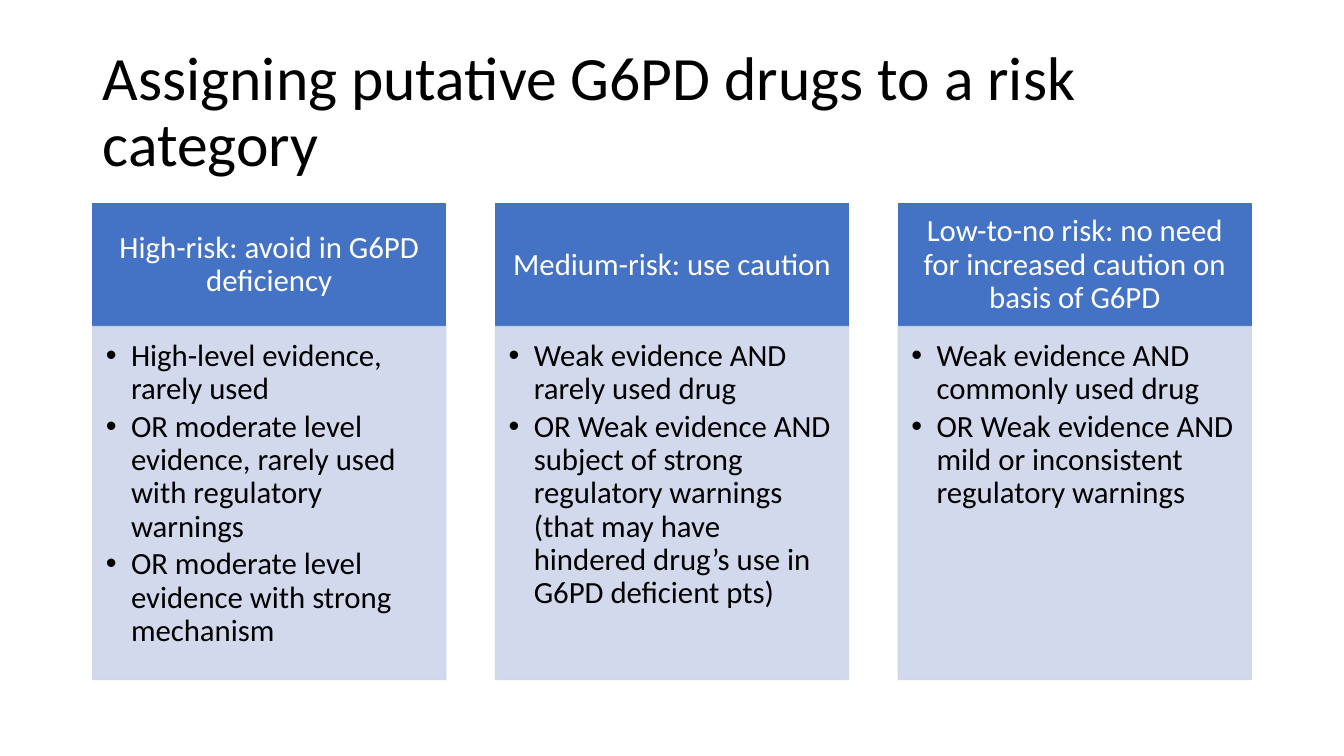
"""Build a slide that sorts G6PD drugs into three risk columns."""
from lxml import etree
from pptx import Presentation
from pptx.dml.color import RGBColor
from pptx.enum.shapes import MSO_SHAPE
from pptx.enum.text import MSO_ANCHOR, PP_ALIGN
from pptx.oxml.ns import qn
from pptx.util import Inches, Pt

RECT = MSO_SHAPE.RECTANGLE
TOP, MIDDLE = MSO_ANCHOR.TOP, MSO_ANCHOR.MIDDLE
LEFT, CENTER = PP_ALIGN.LEFT, PP_ALIGN.CENTER
COLORS = {"head": "4472C4", "body": "CFD5EA", "light": "FFFFFF", "dark": "000000"}
FONT = "Calibri"


def write(shape, lines, size=22, color="dark", align=LEFT, anchor=TOP,
          pad=(0.1, 0.05, 0.1, 0.05), after=0, bullet=False):
    frame = shape.text_frame
    frame.word_wrap = True
    frame.vertical_anchor = anchor
    frame.margin_left, frame.margin_top, frame.margin_right, frame.margin_bottom = map(Inches, pad)
    for n, line in enumerate(lines):
        para = frame.add_paragraph() if n else frame.paragraphs[0]
        para.alignment = align
        para.line_spacing = 0.9
        para.space_before = Pt(0)
        para.space_after = Pt(after)
        if bullet:
            props = para._p.get_or_add_pPr()
            props.set("marL", str(Inches(0.25)))
            props.set("indent", str(Inches(-0.25)))
            etree.SubElement(props, qn("a:buFont"), typeface="Arial")
            etree.SubElement(props, qn("a:buChar"), char="•")
        run = para.add_run()
        run.text = line
        run.font.name = FONT
        run.font.size = Pt(size)
        run.font.color.rgb = RGBColor.from_string(COLORS[color])


def block(x, y, w, h, color, alpha=100):
    shape = slide.shapes.add_shape(RECT, Inches(x), Inches(y), Inches(w), Inches(h))
    shape.shadow.inherit = False
    tone = RGBColor.from_string(COLORS[color])
    shape.fill.solid()
    shape.fill.fore_color.rgb = tone
    shape.line.color.rgb = tone
    shape.line.width = Pt(1)
    if alpha < 100:
        for node in shape._element.spPr.iter(qn("a:srgbClr")):
            etree.SubElement(node, qn("a:alpha"), val=str(alpha * 1000))
    return shape


deck = Presentation()
deck.slide_width, deck.slide_height = Inches(13.33), Inches(7.5)
slide = deck.slides.add_slide(deck.slide_layouts[6])

EDGE, SPAN = 0.92, 11.49
title = slide.shapes.add_textbox(Inches(EDGE), Inches(0.4), Inches(SPAN), Inches(1.45))
write(title, ["Assigning putative G6PD drugs to a risk category"], size=44, anchor=MIDDLE)

RISKS = [
    ("High-risk: avoid in G6PD deficiency",
     ["High-level evidence, rarely used",
      "OR moderate level evidence, rarely used with regulatory warnings",
      "OR moderate level evidence with strong mechanism"]),
    ("Medium-risk: use caution",
     ["Weak evidence AND rarely used drug",
      "OR Weak evidence AND subject of strong regulatory warnings "
      "(that may have hindered drug’s use in G6PD deficient pts)"]),
    ("Low-to-no risk: no need for increased caution on basis of G6PD",
     ["Weak evidence AND commonly used drug",
      "OR Weak evidence AND mild or inconsistent regulatory warnings"]),
]
WIDTH, HEAD_TOP, HEAD_TALL, BODY_TALL = 3.5, 2.02, 1.22, 3.5
STEP = (SPAN - WIDTH) / (len(RISKS) - 1)

for col, (name, rules) in enumerate(RISKS):
    x = EDGE + col * STEP
    head = block(x, HEAD_TOP, WIDTH, HEAD_TALL, "head")
    write(head, [name], color="light", align=CENTER, anchor=MIDDLE, pad=(0.17, 0.1, 0.17, 0.1))
    body = block(x, HEAD_TOP + HEAD_TALL, WIDTH, BODY_TALL, "body", alpha=90)
    write(body, rules, pad=(0.13, 0.13, 0.17, 0.19), after=3.3, bullet=True)

deck.save("out.pptx")
